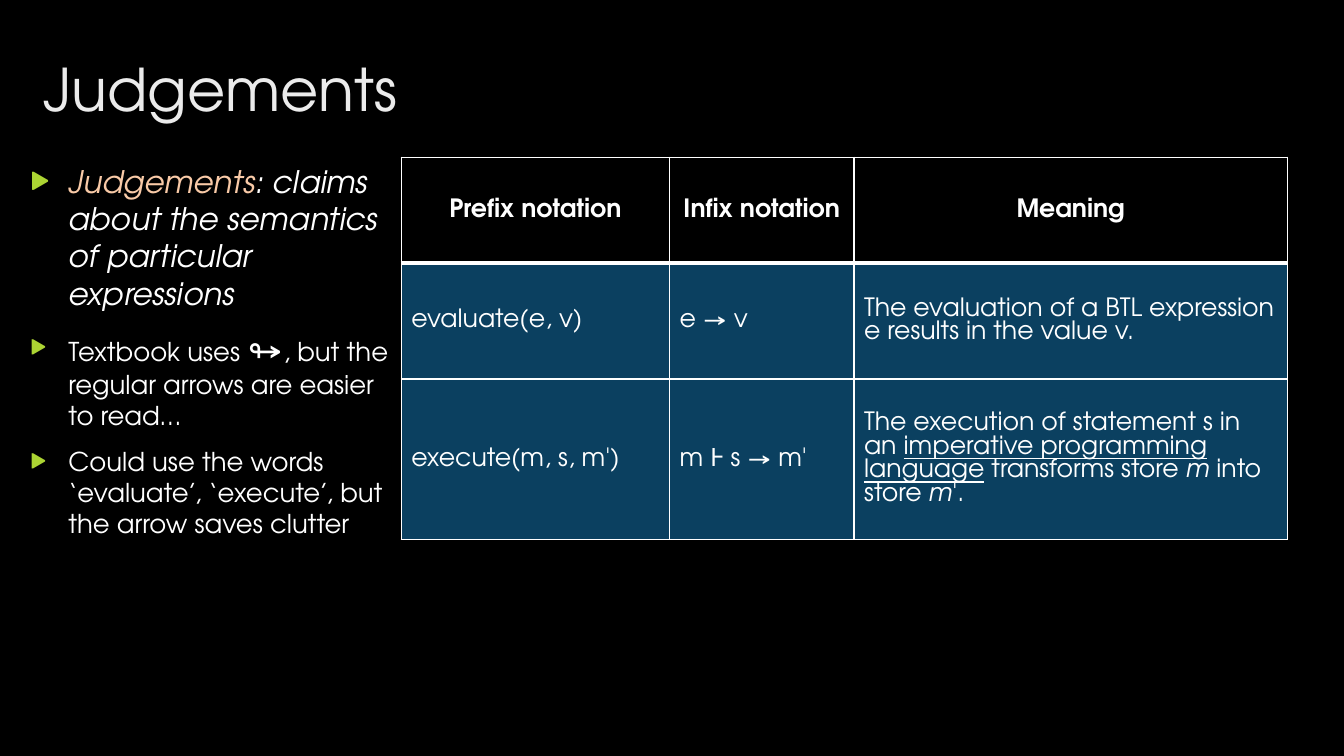
"""Build the slide on judgements: three bullets beside a table of notations."""
from lxml import etree
from pptx import Presentation
from pptx.dml.color import RGBColor
from pptx.enum.text import MSO_ANCHOR, PP_ALIGN
from pptx.oxml.ns import qn
from pptx.util import Inches, Pt

FONT = "TeX Gyre Adventor"
BLACK = RGBColor(0x00, 0x00, 0x00)
WHITE = RGBColor(0xFF, 0xFF, 0xFF)
TITLE_GREY = RGBColor(0xEB, 0xEB, 0xEB)
PEACH = RGBColor(0xF9, 0xCA, 0xA7)
LIME = RGBColor(0xAC, 0xD4, 0x33)
BLUE = RGBColor(0x0B, 0x40, 0x60)
MIDDLE, TOP = MSO_ANCHOR.MIDDLE, MSO_ANCHOR.TOP
LEFT, CENTER = PP_ALIGN.LEFT, PP_ALIGN.CENTER

SLIDE_SIZE = (13.33, 7.5)
TITLE_BOX = (0.33, 0.47, 4, 0.73)
BULLET_BOX = (0.2, 1.56, 3.79, 4.24)
TABLE_CORNER = (3.98, 1.56)
COLUMN_WIDTHS = (2.66, 1.83, 4.3)
ROW_HEIGHTS = (1.05, 1.15, 1.59)
BULLET_INDENT = 0.38

TITLE = "Judgements"
LEAD = {"size": 22.2, "italic": True}
BULLETS = [
    [("Judgements", {**LEAD, "color": PEACH}),
     (": claims about the semantics of particular expressions", LEAD)],
    [("Textbook uses ", {}), ("↬", {"size": 25.9}),
     (", but the regular arrows are easier to read…", {})],
    [("Could use the words ‘evaluate’, ‘execute’, but the arrow saves clutter", {})],
]
ROWS = [
    ["Prefix notation", "Infix notation", "Meaning"],
    ["evaluate(e, v)", "e → v",
     "The evaluation of a BTL expression e results in the value v."],
    ["execute(m, s, m')", "m Ⱶ s → m'",
     [("The execution of statement s in an ", {}),
      ("imperative programming language", {"underline": True}),
      (" transforms store ", {}), ("m", {"italic": True}),
      (" into store ", {}), ("m", {"italic": True}), ("'.", {})]],
]


def write(paragraph, text, size=18, color=WHITE, align=LEFT, **styles):
    """Fill a paragraph with a string or with (text, format) runs."""
    paragraph.alignment = align
    runs = [(text, {})] if isinstance(text, str) else text
    for words, changes in runs:
        run = paragraph.add_run()
        run.text = words
        look = {"size": size, "color": color, **styles, **changes}
        run.font.name = FONT
        run.font.size = Pt(look["size"])
        run.font.color.rgb = look["color"]
        run.font.bold = look.get("bold", False)
        run.font.italic = look.get("italic", False)
        run.font.underline = look.get("underline", False)


def add_bullet(paragraph):
    """Give a paragraph a hanging lime triangle."""
    properties = paragraph._p.get_or_add_pPr()
    properties.set("marL", str(Inches(BULLET_INDENT)))
    properties.set("indent", str(-Inches(BULLET_INDENT)))
    color = etree.SubElement(properties, qn("a:buClr"))
    etree.SubElement(color, qn("a:srgbClr"), val=str(LIME))
    etree.SubElement(properties, qn("a:buSzPct"), val="80000")
    etree.SubElement(properties, qn("a:buFont"), typeface=FONT)
    etree.SubElement(properties, qn("a:buChar"), char="▶")


def set_borders(cell, widths):
    """Draw the cell's white borders ahead of its fill."""
    properties = cell._tc.get_or_add_tcPr()
    for position, (side, width) in enumerate(widths.items()):
        line = etree.Element(qn(f"a:ln{side}"), w=str(Pt(width)))
        fill = etree.SubElement(line, qn("a:solidFill"))
        etree.SubElement(fill, qn("a:srgbClr"), val=str(WHITE))
        properties.insert(position, line)


def add_title(slide):
    """Place and format the title."""
    title = slide.shapes.title
    title.left, title.top, title.width, title.height = map(Inches, TITLE_BOX)
    title.text_frame.vertical_anchor = TOP
    write(title.text_frame.paragraphs[0], TITLE, size=42, color=TITLE_GREY)


def add_bullets(slide):
    """Write the bullet list."""
    frame = slide.shapes.add_textbox(*map(Inches, BULLET_BOX)).text_frame
    frame.word_wrap = True
    frame.vertical_anchor = TOP
    for index, runs in enumerate(BULLETS):
        paragraph = frame.add_paragraph() if index else frame.paragraphs[0]
        if index:
            paragraph.space_before = Pt(10)
        add_bullet(paragraph)
        write(paragraph, runs, size=18.5)


def add_notation_table(slide):
    """Build the table of notations."""
    size = (sum(COLUMN_WIDTHS), sum(ROW_HEIGHTS))
    table = slide.shapes.add_table(
        len(ROWS), len(COLUMN_WIDTHS), *map(Inches, TABLE_CORNER + size)).table
    for column, width in zip(table.columns, COLUMN_WIDTHS):
        column.width = Inches(width)
    for row_index, (row, height) in enumerate(zip(table.rows, ROW_HEIGHTS)):
        row.height = Inches(height)
        header = row_index == 0
        borders = {"L": 1, "R": 1, "T": 3 if row_index == 1 else 1, "B": 3 if header else 1}
        for cell, text in zip(row.cells, ROWS[row_index]):
            cell.fill.solid()
            cell.fill.fore_color.rgb = BLACK if header else BLUE
            cell.vertical_anchor = MIDDLE
            set_borders(cell, borders)
            write(cell.text_frame.paragraphs[0], text, bold=header,
                  align=CENTER if header else LEFT)


def main():
    """Assemble and save the presentation."""
    presentation = Presentation()
    presentation.slide_width, presentation.slide_height = map(Inches, SLIDE_SIZE)
    slide = presentation.slides.add_slide(presentation.slide_layouts[5])
    slide.background.fill.solid()
    slide.background.fill.fore_color.rgb = BLACK
    add_title(slide)
    add_bullets(slide)
    add_notation_table(slide)
    presentation.save("out.pptx")


if __name__ == "__main__":
    main()
